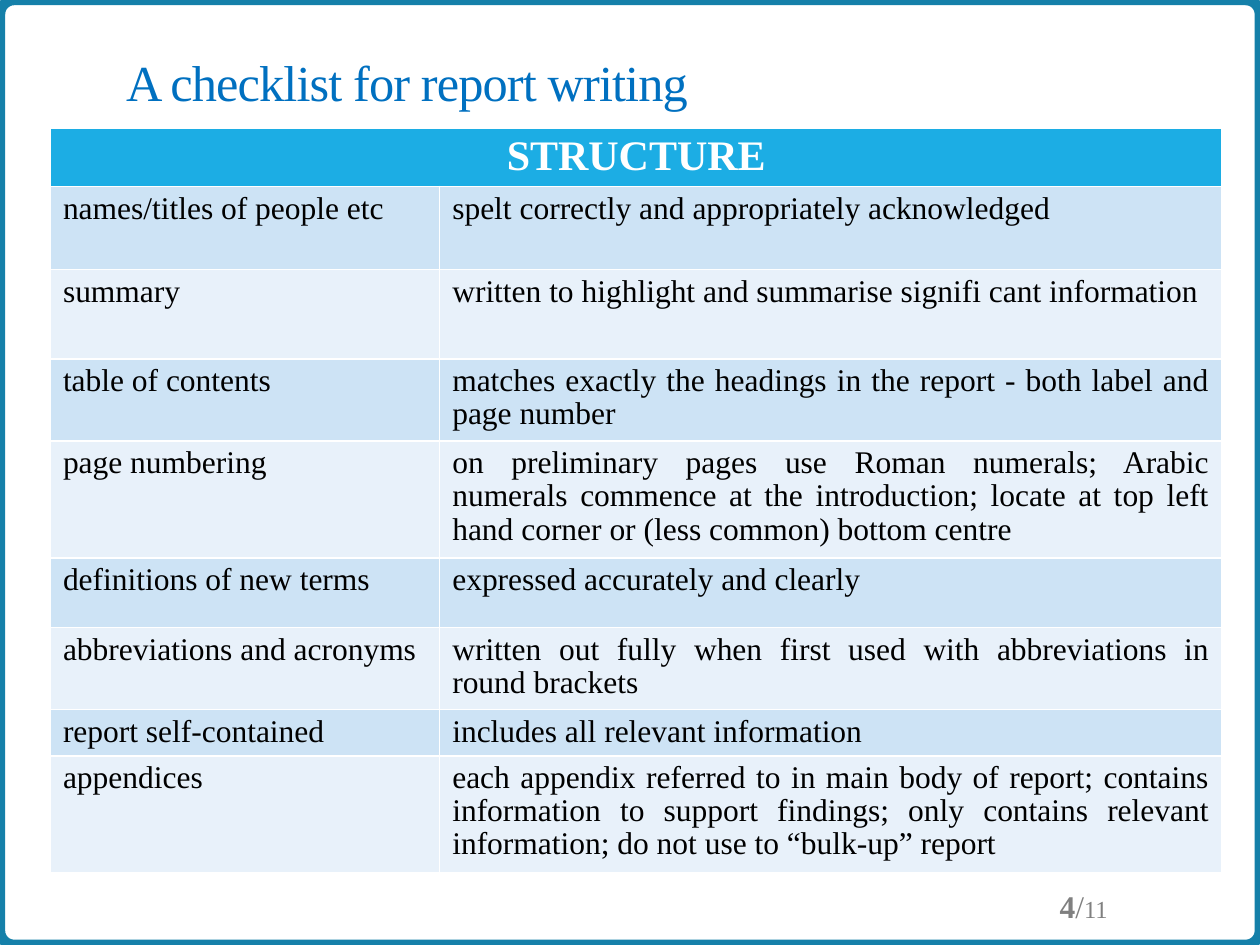
from dataclasses import dataclass

from pptx import Presentation
from pptx import util as u
from pptx.dml import color
from pptx.enum import shapes, text


@dataclass(frozen=True)
class Theme:
    font: str = "Times New Roman"
    frame: str = "1580A9"
    title: str = "0070C0"
    header: str = "1CADE4"
    bands: tuple = ("CDE3F5", "E8F1FA")
    white: str = "FFFFFF"
    black: str = "000000"
    grey: str = "808080"
    title_size: float = 28.8
    header_size: int = 24
    body_size: int = 18
    total_size: int = 14


theme = Theme()


def add_span(para, words, size, shade, bold=False):
    span = para.add_run()
    span.text = words
    formats = {"name": theme.font, "size": u.Pt(size), "bold": bold}
    for name, value in formats.items():
        setattr(span.font, name, value)
    span.font.color.rgb = color.RGBColor.from_string(shade)
    return span


def fill_cell(cell, words, size, shade, fill, align, bold=False):
    cell.fill.solid()
    cell.fill.fore_color.rgb = color.RGBColor.from_string(fill)
    para = cell.text_frame.paragraphs[0]
    para.alignment = align
    para.line_spacing = 0.95
    add_span(para, words, size, shade, bold)


deck = Presentation()
deck.slide_width, deck.slide_height = u.Inches(10), u.Inches(7.5)
page = deck.slides.add_slide(deck.slide_layouts[5])

frame = page.shapes.add_shape(
    shapes.MSO_SHAPE.ROUNDED_RECTANGLE, 0, 0, deck.slide_width, deck.slide_height
)
frame.adjustments[0] = 0.015
frame.shadow.inherit = False
frame.fill.background()
frame.line.color.rgb = color.RGBColor.from_string(theme.frame)
frame.line.width = u.Pt(6)

title = page.shapes.title
place = {"left": 0.9, "top": 0.31, "width": 8.25, "height": 0.63}
for name, value in place.items():
    setattr(title, name, u.Inches(value))
title.text_frame.word_wrap = True
title.text_frame.auto_size = text.MSO_AUTO_SIZE.NONE
title.text_frame.vertical_anchor = text.MSO_ANCHOR.BOTTOM
para = title.text_frame.paragraphs[0]
para.alignment = text.PP_ALIGN.LEFT
para.line_spacing = 0.85
span = add_span(para, "A checklist for report writing", theme.title_size, theme.title)
span.font._element.set("spc", "-50")

checklist = [
    (0.66, "names/titles of people etc", "spelt correctly and appropriately acknowledged"),
    (0.71, "summary", "written to highlight and summarise signifi cant information"),
    (0.65, "table of contents",
     "matches exactly the headings in the report - both label and page number"),
    (0.93, "page numbering",
     "on preliminary pages use Roman numerals; Arabic numerals commence at the "
     "introduction; locate at top left hand corner or (less common) bottom centre"),
    (0.55, "definitions of new terms", "expressed accurately and clearly"),
    (0.65, "abbreviations and acronyms",
     "written out fully when first used with abbreviations in round brackets"),
    (0.37, "report self-contained", "includes all relevant information"),
    (0.93, "appendices",
     "each appendix referred to in main body of report; contains information to "
     "support findings; only contains relevant information; do not use to “bulk-up” report"),
]
header_height = 0.46
table_height = header_height + sum(height for height, *_ in checklist)
table = page.shapes.add_table(
    len(checklist) + 1, 2,
    u.Inches(0.4), u.Inches(1.02), u.Inches(9.3), u.Inches(table_height),
).table
for column, width in zip(table.columns, (3.09, 6.21)):
    column.width = u.Inches(width)

table.rows[0].height = u.Inches(header_height)
header = table.cell(0, 0)
header.merge(table.cell(0, 1))
fill_cell(header, "STRUCTURE", theme.header_size, theme.white, theme.header,
          text.PP_ALIGN.CENTER, bold=True)

for index, (height, *entries) in enumerate(checklist):
    row = table.rows[index + 1]
    row.height = u.Inches(height)
    for cell, words in zip(row.cells, entries):
        fill_cell(cell, words, theme.body_size, theme.black, theme.bands[index % 2],
                  text.PP_ALIGN.JUSTIFY)

box = page.shapes.add_textbox(u.Inches(7.81), u.Inches(6.99), u.Inches(1.08), u.Inches(0.4))
box.text_frame.word_wrap = True
box.text_frame.vertical_anchor = text.MSO_ANCHOR.MIDDLE
para = box.text_frame.paragraphs[0]
para.alignment = text.PP_ALIGN.RIGHT
add_span(para, "4", theme.body_size, theme.grey, bold=True)
add_span(para, "/", theme.body_size, theme.grey)
add_span(para, "11", theme.total_size, theme.grey)

deck.save("out.pptx")
